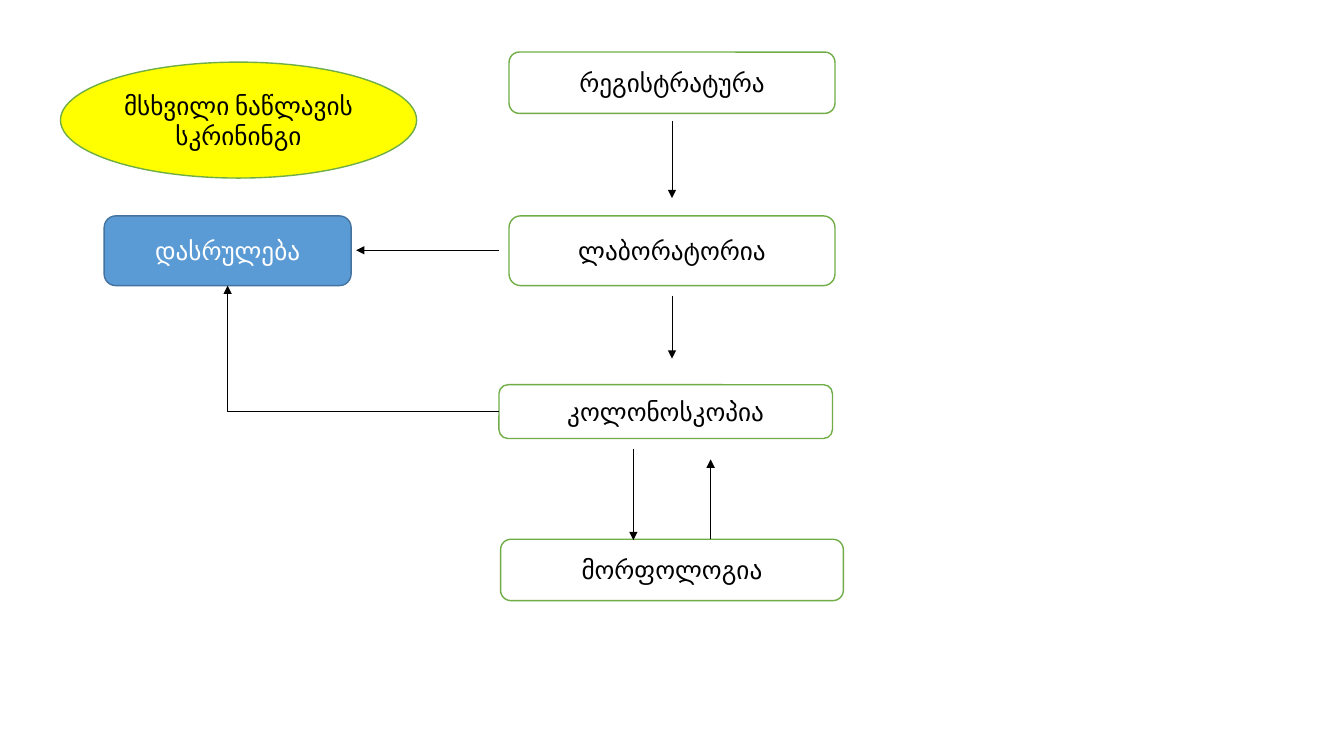
from dataclasses import dataclass

from lxml.etree import SubElement
from pptx import Presentation
from pptx.dml.color import RGBColor
from pptx.enum.shapes import MSO_CONNECTOR, MSO_SHAPE
from pptx.enum.text import MSO_ANCHOR, PP_ALIGN
from pptx.oxml.ns import qn
from pptx.util import Inches, Pt


@dataclass(frozen=True)
class Theme:
    font: str = "Calibri"
    text_size: float = 18
    box_line: float = 1
    arrow_line: float = 0.5
    black: str = "000000"
    white: str = "FFFFFF"
    yellow: str = "FFFF00"
    green: str = "70AD47"
    blue: str = "5B9BD5"
    dark_blue: str = "43739E"


class FlowSlide:
    columns = 160
    rows = 90

    def __init__(self, deck, theme):
        self.theme = theme
        self.column = deck.slide_width / self.columns
        self.row = deck.slide_height / self.rows
        self.page = deck.slides.add_slide(deck.slide_layouts[6])

    def place(self, across, down):
        return round(across * self.column), round(down * self.row)

    def box(self, words, left, top, width, height, fill=None, line=None,
            ink=None, kind=MSO_SHAPE.ROUNDED_RECTANGLE):
        theme = self.theme
        box = self.page.shapes.add_shape(
            kind, *self.place(left, top), *self.place(width, height))
        box.shadow.inherit = False
        box.fill.solid()
        box.fill.fore_color.rgb = RGBColor.from_string(fill or theme.white)
        box.line.color.rgb = RGBColor.from_string(line or theme.green)
        box.line.width = Pt(theme.box_line)
        frame = box.text_frame
        frame.word_wrap = True
        frame.vertical_anchor = MSO_ANCHOR.MIDDLE
        frame.text = words
        para = frame.paragraphs[0]
        para.alignment = PP_ALIGN.CENTER
        span = para.runs[0]
        span.font.name = theme.font
        span.font.size = Pt(theme.text_size)
        span.font.color.rgb = RGBColor.from_string(ink or theme.black)
        return box

    def arrow(self, start, end, kind=MSO_CONNECTOR.STRAIGHT):
        arrow = self.page.shapes.add_connector(
            kind, *self.place(*start), *self.place(*end))
        arrow.line.color.rgb = RGBColor.from_string(self.theme.black)
        arrow.line.width = Pt(self.theme.arrow_line)
        properties = arrow._element.spPr
        SubElement(properties.find(qn("a:ln")), qn("a:tailEnd"), type="triangle")
        SubElement(properties, qn("a:effectLst"))
        return arrow

    def corner_arrow(self, source, target, start, end):
        arrow = self.arrow(start, end, MSO_CONNECTOR.ELBOW)
        arrow._element.spPr.find(qn("a:prstGeom")).set("prst", "bentConnector2")
        arrow.begin_connect(source, 1)
        arrow.end_connect(target, 2)


def main():
    deck = Presentation()
    deck.slide_width, deck.slide_height = Inches(13.33), Inches(7.5)
    theme = Theme()
    flow = FlowSlide(deck, theme)

    flow.box("მსხვილი ნაწლავის სკრინინგი", 7.2, 7.4, 42.4, 13.8,
             fill=theme.yellow, kind=MSO_SHAPE.OVAL)
    flow.box("რეგისტრატურა", 60.6, 6.2, 38.8, 7.3)
    flow.box("ლაბორატორია", 60.6, 25.7, 38.8, 8.3)
    finish = flow.box("დასრულება", 12.4, 25.7, 29.4, 8.3,
                      fill=theme.blue, line=theme.dark_blue, ink=theme.white)
    colonoscopy = flow.box("კოლონოსკოპია", 59.4, 45.8, 39.7, 6.4)
    flow.box("მორფოლოგია", 59.6, 64.2, 40.8, 7.3)

    for start, end in (
        ((80, 14.4), (80, 23.6)),
        ((59.4, 29.8), (42.4, 29.8)),
        ((80, 35.2), (80, 42.7)),
        ((75.4, 53.4), (75.4, 64.3)),
        ((84.6, 64.2), (84.6, 54.7)),
    ):
        flow.arrow(start, end)
    flow.corner_arrow(colonoscopy, finish, (59.4, 49), (27.1, 34))

    deck.save("out.pptx")


if __name__ == "__main__":
    main()
